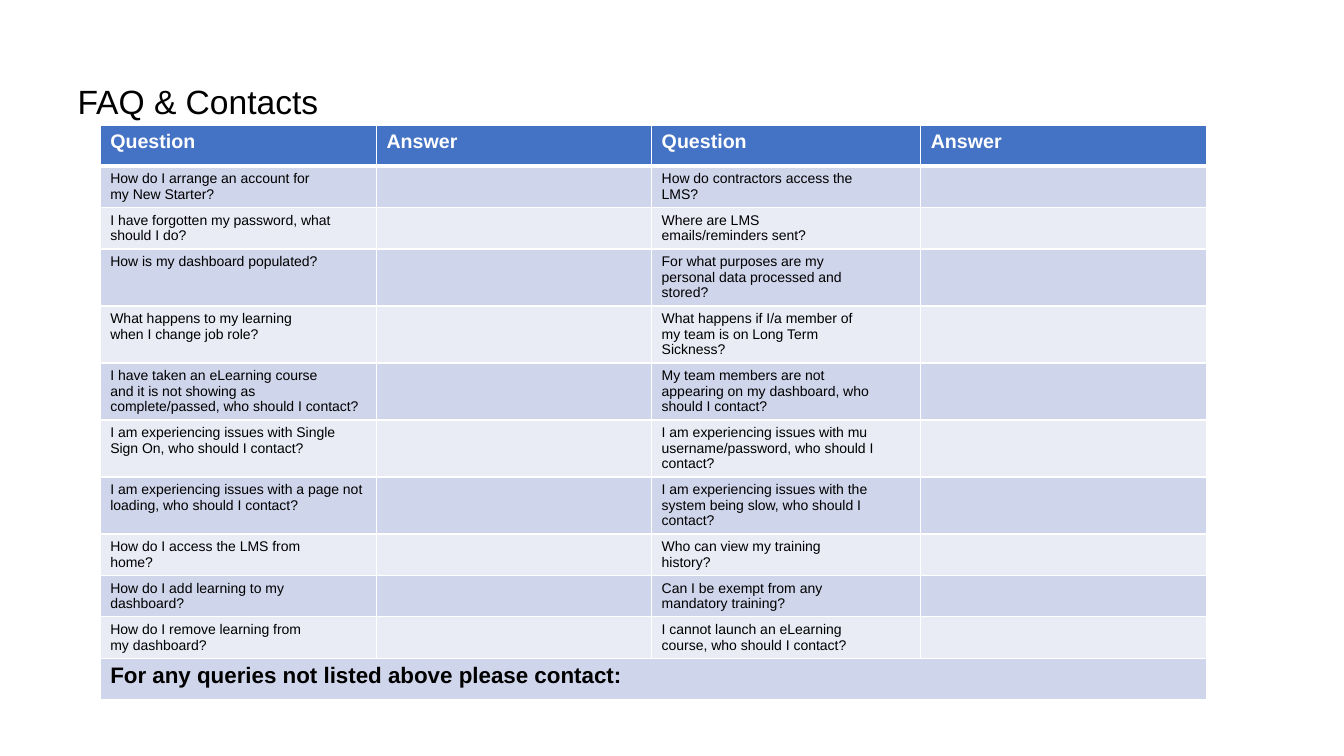
from lxml.etree import SubElement
from pptx import Presentation
from pptx.dml.color import RGBColor
from pptx.enum.text import MSO_ANCHOR, MSO_AUTO_SIZE, PP_ALIGN
from pptx.oxml.ns import qn
from pptx.util import Pt

WHITE, BLACK = "FFFFFF", "000000"
HEADER_BLUE = "4472C4"
BANDS = ("E9EBF5", "CFD5EA")  # even rows, odd rows
COLUMN_WIDTHS = (197.3, 196.6, 192.2, 204.5)
ROW_HEIGHT = 29.2

# Question pairs: left column, right column
QUESTIONS = [
    ("How do I arrange an account for\nmy New Starter?",
     "How do contractors access the\nLMS?"),
    ("I have forgotten my password, what should I do?",
     "Where are LMS\nemails/reminders sent?"),
    ("How is my dashboard populated?",
     "For what purposes are my\npersonal data processed and\nstored?"),
    ("What happens to my learning\nwhen I change job role?",
     "What happens if I/a member of\nmy team is on Long Term\nSickness?"),
    ("I have taken an eLearning course\nand it is not showing as\n"
     "complete/passed, who should I contact?",
     "My team members are not\nappearing on my dashboard, who should I contact?"),
    ("I am experiencing issues with Single Sign On, who should I contact?",
     "I am experiencing issues with mu username/password, who should I contact?"),
    ("I am experiencing issues with a page not loading, who should I contact?",
     "I am experiencing issues with the system being slow, who should I contact?"),
    ("How do I access the LMS from\nhome?",
     "Who can view my training\nhistory?"),
    ("How do I add learning to my\ndashboard?",
     "Can I be exempt from any\nmandatory training?"),
    ("How do I remove learning from\nmy dashboard?",
     "I cannot launch an eLearning\ncourse, who should I contact?"),
]


def colour(hex_code):
    return RGBColor.from_string(hex_code)


def write(frame, text, size=10, bold=False, ink=BLACK, font="Arial",
          line_spacing=None, space_after=None):
    """Fill a text frame, one paragraph per line of text."""
    frame.text = text
    for paragraph in frame.paragraphs:
        paragraph.alignment = PP_ALIGN.LEFT
        if line_spacing:
            paragraph.line_spacing = line_spacing
        if space_after:
            paragraph.space_after = Pt(space_after)
        for run in paragraph.runs:
            run.font.name = font
            run.font.size = Pt(size)
            run.font.bold = bold
            run.font.color.rgb = colour(ink)


class FaqSlide:
    def __init__(self, deck):
        self.slide = deck.slides.add_slide(deck.slide_layouts[5])

    def title(self, text, left, top, width, height):
        heading = self.slide.shapes.title
        heading.left, heading.top = Pt(left), Pt(top)
        heading.width, heading.height = Pt(width), Pt(height)
        frame = heading.text_frame
        frame.auto_size = MSO_AUTO_SIZE.NONE
        frame.vertical_anchor = MSO_ANCHOR.MIDDLE
        write(frame, text, size=24, line_spacing=0.9, space_after=6)

    def table(self, row_count, left, top):
        faq = self.slide.shapes.add_table(
            row_count, len(COLUMN_WIDTHS), Pt(left), Pt(top),
            Pt(sum(COLUMN_WIDTHS)), Pt(row_count * ROW_HEIGHT)).table
        for column, width in zip(faq.columns, COLUMN_WIDTHS):
            column.width = Pt(width)
        for index, row in enumerate(faq.rows):
            row.height = Pt(ROW_HEIGHT)
            for cell in row.cells:
                self.borders(cell, top=3 if index == 1 else 1,
                             bottom=3 if index == 0 else 1)
                cell.fill.solid()
                cell.fill.fore_color.rgb = colour(
                    BANDS[index % 2] if index else HEADER_BLUE)
        return faq

    def borders(self, cell, top, bottom):
        properties = cell._tc.get_or_add_tcPr()
        for side, width in (("L", 1), ("R", 1), ("T", top), ("B", bottom)):
            line = SubElement(properties, qn(f"a:ln{side}"), w=str(Pt(width)))
            fill = SubElement(line, qn("a:solidFill"))
            SubElement(fill, qn("a:srgbClr"), val=WHITE)


def main():
    deck = Presentation()
    deck.slide_width, deck.slide_height = Pt(960), Pt(540)
    page = FaqSlide(deck)
    page.title("FAQ & Contacts", 48.2, 59, 204.5, 30.2)

    # Header row
    faq = page.table(len(QUESTIONS) + 2, 71.6, 89.5)
    for column, heading in enumerate(("Question", "Answer") * 2):
        write(faq.cell(0, column).text_frame, heading, size=14, bold=True, ink=WHITE)

    # Questions, with the answers left open
    for row, pair in enumerate(QUESTIONS, start=1):
        for column, question in zip((0, 2), pair):
            write(faq.cell(row, column).text_frame, question)

    # Contact row across the whole table
    last = len(QUESTIONS) + 1
    contact = faq.cell(last, 0)
    contact.merge(faq.cell(last, len(COLUMN_WIDTHS) - 1))
    write(contact.text_frame, "For any queries not listed above please contact:",
          size=16, bold=True)

    deck.save("out.pptx")


if __name__ == "__main__":
    main()
